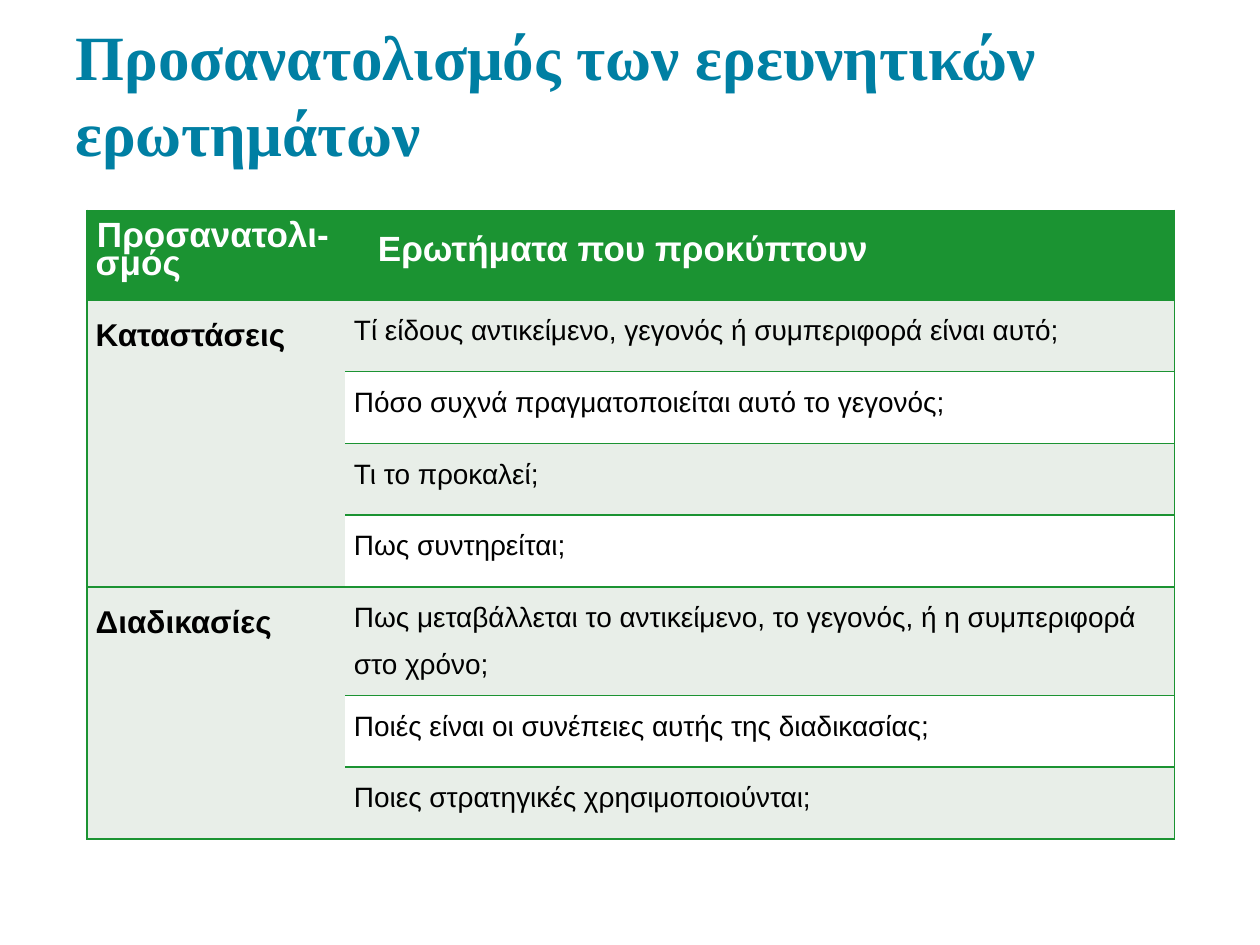
import pptx
import pptx.util
import pptx.dml.color
import pptx.enum.text
import pptx.oxml
import pptx.oxml.ns

Inches = pptx.util.Inches
Pt = pptx.util.Pt
Align = pptx.enum.text.PP_ALIGN
Anchor = pptx.enum.text.MSO_ANCHOR

COLORS = {"title": "007FA3", "green": "1B9332", "pale": "E8EEE8",
          "white": "FFFFFF", "black": "000000"}
PLAIN = "{2D5ABB26-0587-4C30-8999-92F81FD0307C}"
HEADS = [("Προσανατολι-σμός", 0.01), ("Ερωτήματα που προκύπτουν", 0.19)]
GROUPS = [
    ("Καταστάσεις", [
        "Τί είδους αντικείμενο, γεγονός ή συμπεριφορά είναι αυτό;",
        "Πόσο συχνά πραγματοποιείται αυτό το γεγονός;",
        "Τι το προκαλεί;",
        "Πως συντηρείται;"]),
    ("Διαδικασίες", [
        "Πως μεταβάλλεται το αντικείμενο, το γεγονός, ή η συμπεριφορά στο χρόνο;",
        "Ποιές είναι οι συνέπειες αυτής της διαδικασίας;",
        "Ποιες στρατηγικές χρησιμοποιούνται;"]),
]
WIDTHS = [2.05, 6.58]
HEIGHTS = [0.71] + [0.57] * 4 + [0.86] + [0.57] * 2


def put(target, values):
    for name, value in values.items():
        setattr(target, name, value)


def color(name):
    return pptx.dml.color.RGBColor.from_string(COLORS[name])


class Deck:
    pad = {"margin_left": Inches(0.07), "margin_right": Inches(0.07),
           "margin_top": 0, "margin_bottom": 0}
    body = {"line_spacing": 1.5}
    head = {"line_spacing": Pt(16), "space_after": Pt(6),
            "alignment": Align.JUSTIFY}

    def __init__(self, show):
        self.slide = show.slides.add_slide(show.slide_layouts[6])

    def label(self, para, text, size, tint, bold=True, face="Arial"):
        run = para.add_run()
        run.text = text
        put(run.font, {"size": Pt(size), "bold": bold, "name": face})
        run.font.color.rgb = color(tint)

    def title(self, text, *area):
        frame = self.slide.shapes.add_textbox(*map(Inches, area)).text_frame
        inset = Inches(0.1)
        put(frame, {"word_wrap": True, "vertical_anchor": Anchor.BOTTOM,
                    "margin_left": inset, "margin_right": inset,
                    "margin_top": inset, "margin_bottom": inset})
        self.label(frame.paragraphs[0], text, 36, "title",
                   face="Times New Roman")

    def grid(self, left, top):
        area = map(Inches, (left, top, sum(WIDTHS), sum(HEIGHTS)))
        table = self.slide.shapes.add_table(
            len(HEIGHTS), len(WIDTHS), *area).table
        put(table, {"first_row": False, "horz_banding": False})
        style = table._tbl.tblPr.find(pptx.oxml.ns.qn("a:tableStyleId"))
        style.text = PLAIN
        for col, width in zip(table.columns, WIDTHS):
            col.width = Inches(width)
        for row, height in zip(table.rows, HEIGHTS):
            row.height = Inches(height)
        return table

    def cell(self, cell, fill, sides, anchor=Anchor.TOP):
        put(cell, {**self.pad, "vertical_anchor": anchor})
        cell.fill.solid()
        cell.fill.fore_color.rgb = color(fill)
        props = cell._tc.get_or_add_tcPr()
        for spot, side in enumerate(sides):
            props.insert(spot, pptx.oxml.parse_xml(
                f'<a:ln{side} {pptx.oxml.ns.nsdecls("a")} w="{Pt(1)}">'
                f'<a:solidFill><a:srgbClr val="{COLORS["green"]}"/>'
                f'</a:solidFill></a:ln{side}>'))

    def text(self, cell, text, form, *look, indent=0):
        para = cell.text_frame.paragraphs[0]
        put(para, form)
        para._p.get_or_add_pPr().set("indent", str(Inches(indent)))
        self.label(para, text, *look)


def main():
    show = pptx.Presentation()
    put(show, {"slide_width": Inches(10), "slide_height": Inches(7.5)})
    deck = Deck(show)
    deck.title("Προσανατολισμός των ερευνητικών ερωτημάτων",
               0.5, 0.24, 9, 1.2)
    table = deck.grid(0.69, 1.67)

    for col, (name, indent) in enumerate(HEADS):
        cell = table.cell(0, col)
        deck.cell(cell, "green", ("LTB", "RTB")[col], Anchor.MIDDLE)
        deck.text(cell, name, deck.head, 20, "white", indent=indent)

    row = 1
    for name, asks in GROUPS:
        first, last = row, row + len(asks) - 1
        for ask in asks:
            sides = "LTB" if row == first else "LB" if row == last else "L"
            deck.cell(table.cell(row, 0), "pale", sides)
            cell = table.cell(row, 1)
            deck.cell(cell, "pale" if row % 2 else "white", "RTB")
            deck.text(cell, ask, deck.body, 16, "black", False)
            row += 1
        group = table.cell(first, 0)
        group.merge(table.cell(last, 0))
        deck.text(group, name, deck.body, 18, "black")

    show.save("out.pptx")


if __name__ == "__main__":
    main()
